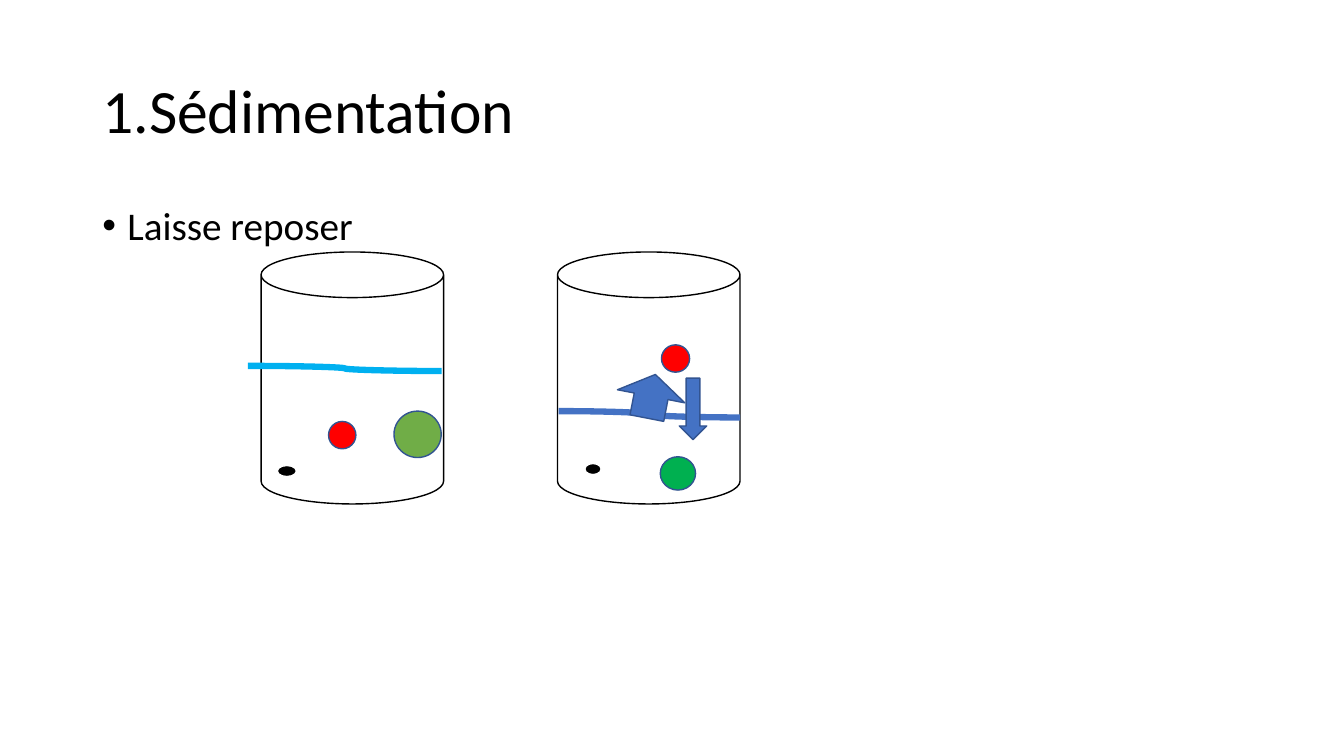
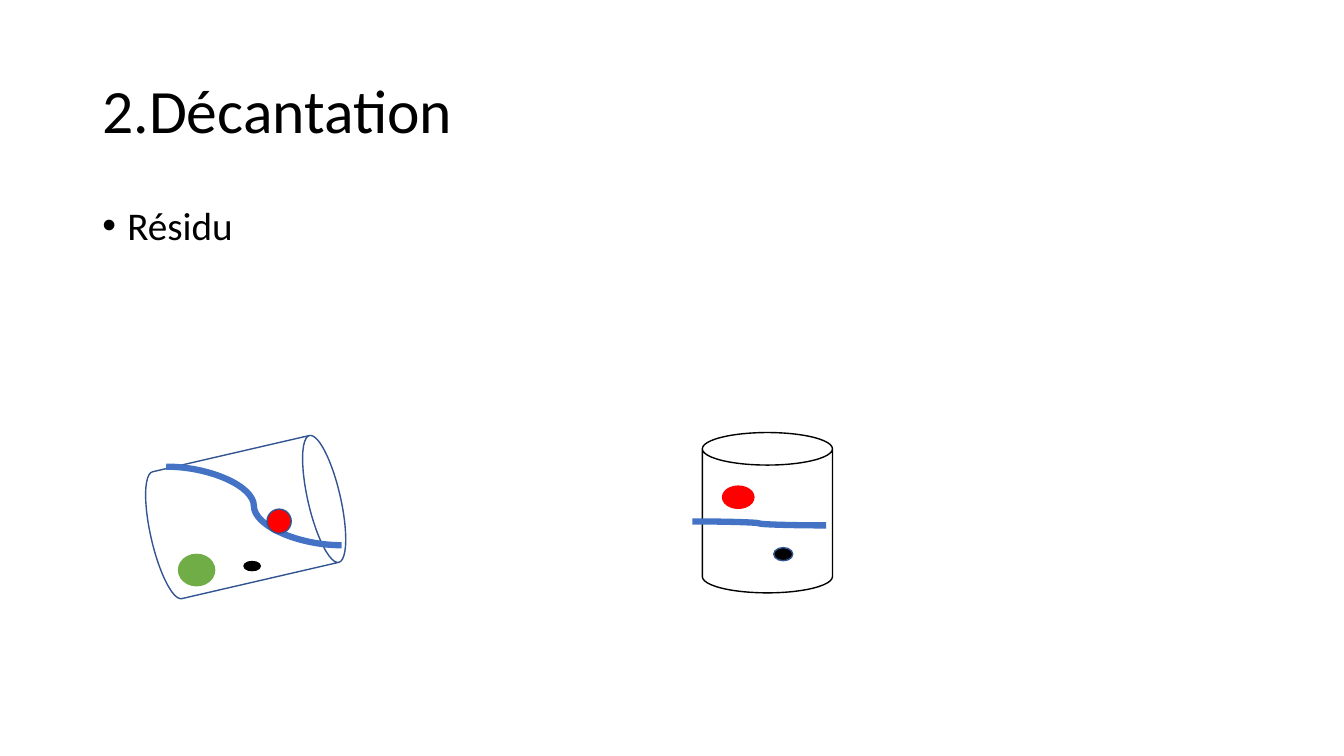
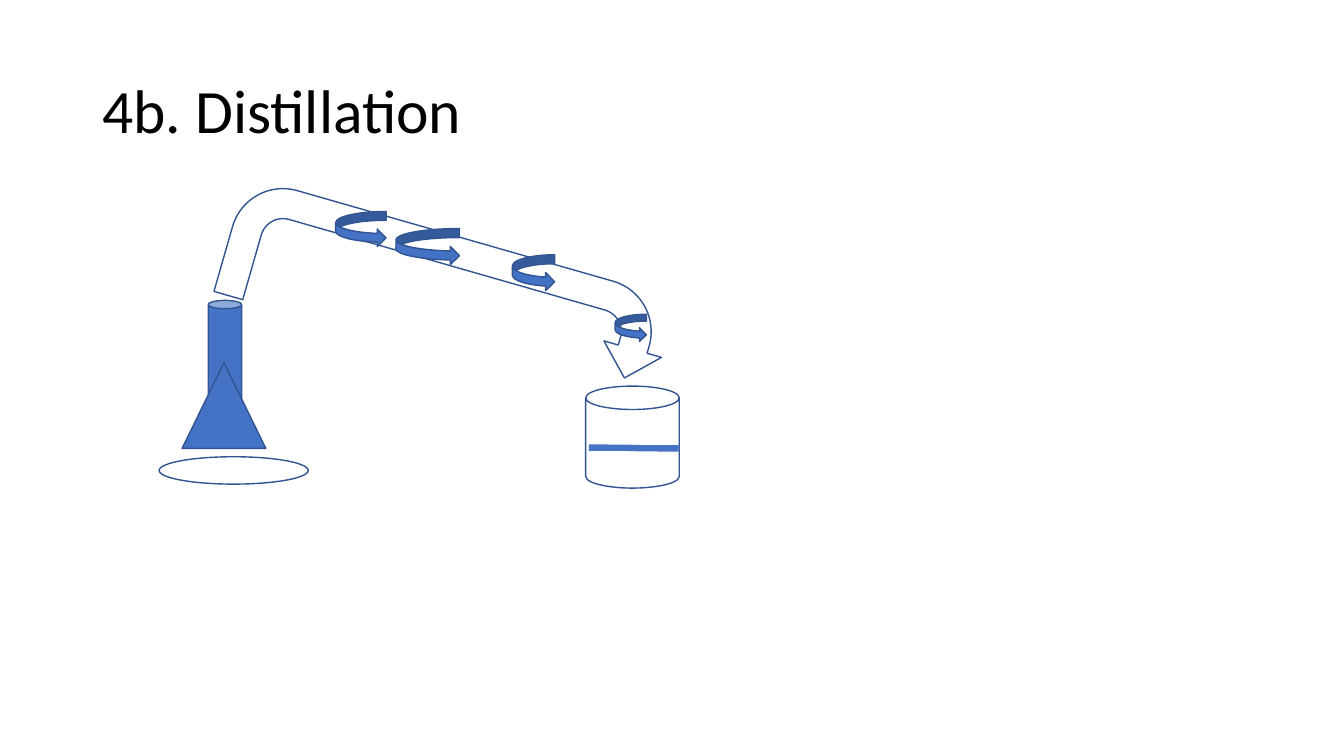
from lxml import etree
from pptx import Presentation
from pptx.dml.color import RGBColor
from pptx.enum.shapes import MSO_CONNECTOR, MSO_SHAPE
from pptx.enum.text import MSO_ANCHOR, PP_ALIGN
from pptx.oxml.ns import qn
from pptx.util import Cm, Pt

CURVE = MSO_CONNECTOR.CURVE
CAN = MSO_SHAPE.CAN
DOT = MSO_SHAPE.FLOWCHART_CONNECTOR
OVAL = MSO_SHAPE.OVAL
CONE = MSO_SHAPE.ISOSCELES_TRIANGLE
UTURN = MSO_SHAPE.U_TURN_ARROW
SWIRL = MSO_SHAPE.CURVED_RIGHT_ARROW
RIGHT = MSO_SHAPE.RIGHT_ARROW
DOWN = MSO_SHAPE.DOWN_ARROW
MIDDLE = MSO_ANCHOR.MIDDLE
TOP = MSO_ANCHOR.TOP
LEFT = PP_ALIGN.LEFT

FONT = "Calibri"
COLORS = {
    "white": "FFFFFF",
    "black": "000000",
    "blue": "4472C4",
    "edge": "325491",
    "sky": "00B0F0",
    "red": "FF0000",
    "olive": "70AD47",
    "green": "00B050",
}
HEAD = (2.33, 1.02, 29.21, 3.68)
BODY = (2.33, 5.08, 29.21, 12.09)


def color(name):
    return RGBColor.from_string(COLORS[name])


def inside(box, part):
    """Move a part, given from the corner of the box, onto the slide."""
    return (box[0] + part[0], box[1] + part[1], *part[2:])


def draw(slide, kind, box, fill="blue", edge="edge", turn=0):
    shape = slide.shapes.add_shape(kind, *map(Cm, box))
    shape.shadow.inherit = False
    shape.fill.solid()
    shape.fill.fore_color.rgb = color(fill)
    shape.line.color.rgb = color(edge)
    shape.line.width = Pt(1)
    shape.rotation = turn


def write(slide, box, text, size, anchor, bullet=False):
    frame = slide.shapes.add_textbox(*map(Cm, box)).text_frame
    frame.word_wrap = True
    frame.vertical_anchor = anchor
    para = frame.paragraphs[0]
    if bullet:
        props = para._p.get_or_add_pPr()
        props.set("marL", str(Cm(0.63)))
        props.set("indent", str(Cm(-0.63)))
        etree.SubElement(props, qn("a:buFont"), typeface="Arial")
        etree.SubElement(props, qn("a:buChar"), char="•")
    para.alignment = LEFT
    para.line_spacing = 0.9
    run = para.add_run()
    run.text = text
    run.font.name = FONT
    run.font.size = Pt(size)
    run.font.color.rgb = color("black")


def water(slide, box, ends, shade):
    """Draw the water line between two points given from the box corner."""
    start, end = (inside(box, point) for point in ends)
    line = slide.shapes.add_connector(CURVE, *map(Cm, start + end))
    line.line.color.rgb = color(shade)
    line.line.width = Pt(4.5)
    etree.SubElement(line._element.spPr, qn("a:effectLst"))


def beaker(slide, box, ends, grains=(), edge="black", shade="blue", turn=0):
    """Draw a vessel, its water line and its grains (part, fill, edge)."""
    draw(slide, CAN, box, "white", edge, turn)
    water(slide, box, ends, shade)
    for part, fill, rim in grains:
        draw(slide, DOT, inside(box, part), fill, rim)


def flask(slide, box):
    draw(slide, CAN, inside(box, (1.24, 0, 0.84, 2.87)))
    draw(slide, CONE, inside(box, (0.58, 1.57, 2.11, 2.16)))
    draw(slide, OVAL, inside(box, (0, 3.94, 3.76, 0.69)), "white")


def pipe(slide, box):
    draw(slide, UTURN, box, "white", turn=16)
    for part in (
        (2.87, -0.61, 1.27, 0.89),
        (4.39, -0.18, 1.6, 0.91),
        (7.32, 0.48, 1.07, 0.91),
        (9.91, 1.98, 0.79, 0.69),
    ):
        draw(slide, SWIRL, inside(box, part))


def page(deck, title, point=None):
    slide = deck.slides.add_slide(deck.slide_layouts[6])
    write(slide, HEAD, title, 44, MIDDLE)
    if point:
        write(slide, BODY, point, 28, TOP, bullet=True)
    return slide


def settling(deck):
    slide = page(deck, "1.Sédimentation", "Laisse reposer")
    beaker(slide, (6.58, 6.35, 4.6, 6.35), ((-0.33, 2.87), (4.55, 3)), (
        ((0.41, 5.38, 0.48, 0.28), "black", "white"),
        ((1.7, 4.27, 0.69, 0.69), "red", "edge"),
        ((3.35, 4.01, 1.19, 1.17), "olive", "edge"),
    ), shade="sky")
    box = (14.05, 6.35, 4.6, 6.35)
    beaker(slide, box, ((0.03, 4.01), (4.6, 4.17)), (
        ((0.69, 5.33, 0.41, 0.28), "black", "white"),
        ((2.62, 2.34, 0.71, 0.69), "red", "edge"),
        ((2.59, 5.16, 0.89, 0.84), "green", "edge"),
    ))
    draw(slide, RIGHT, inside(box, (1.8, 2.77, 1.12, 1.73)), turn=281)
    draw(slide, DOWN, inside(box, (3.07, 3.18, 0.69, 1.55)))


def pouring(deck):
    slide = page(deck, "2.Décantation", "Résidu")
    beaker(slide, (4.55, 10.59, 3.28, 4.88), ((-0.36, 1.17), (4.06, 3.15)), (
        ((-0.05, 3.38, 0.91, 0.79), "olive", "olive"),
        ((1.6, 3.56, 0.41, 0.23), "black", "black"),
        ((2.18, 2.24, 0.61, 0.61), "red", "edge"),
    ), edge="edge", turn=77)
    beaker(slide, (17.7, 10.9, 3.28, 4.04), ((-0.25, 2.24), (3.12, 2.34)), (
        ((0.51, 1.35, 0.79, 0.56), "red", "red"),
        ((1.8, 2.9, 0.48, 0.33), "black", "edge"),
    ))


def distilling(deck):
    slide = page(deck, "4b. Distillation")
    flask(slide, (4.01, 7.57))
    pipe(slide, (5.59, 5.94, 11.3, 3.02))
    beaker(slide, (14.76, 9.73, 2.36, 2.57), ((0.08, 1.55), (2.34, 1.57)),
           edge="edge")


def main():
    deck = Presentation()
    deck.slide_width = Cm(33.87)
    deck.slide_height = Cm(19.05)
    settling(deck)
    pouring(deck)
    distilling(deck)
    deck.save("out.pptx")


if __name__ == "__main__":
    main()
